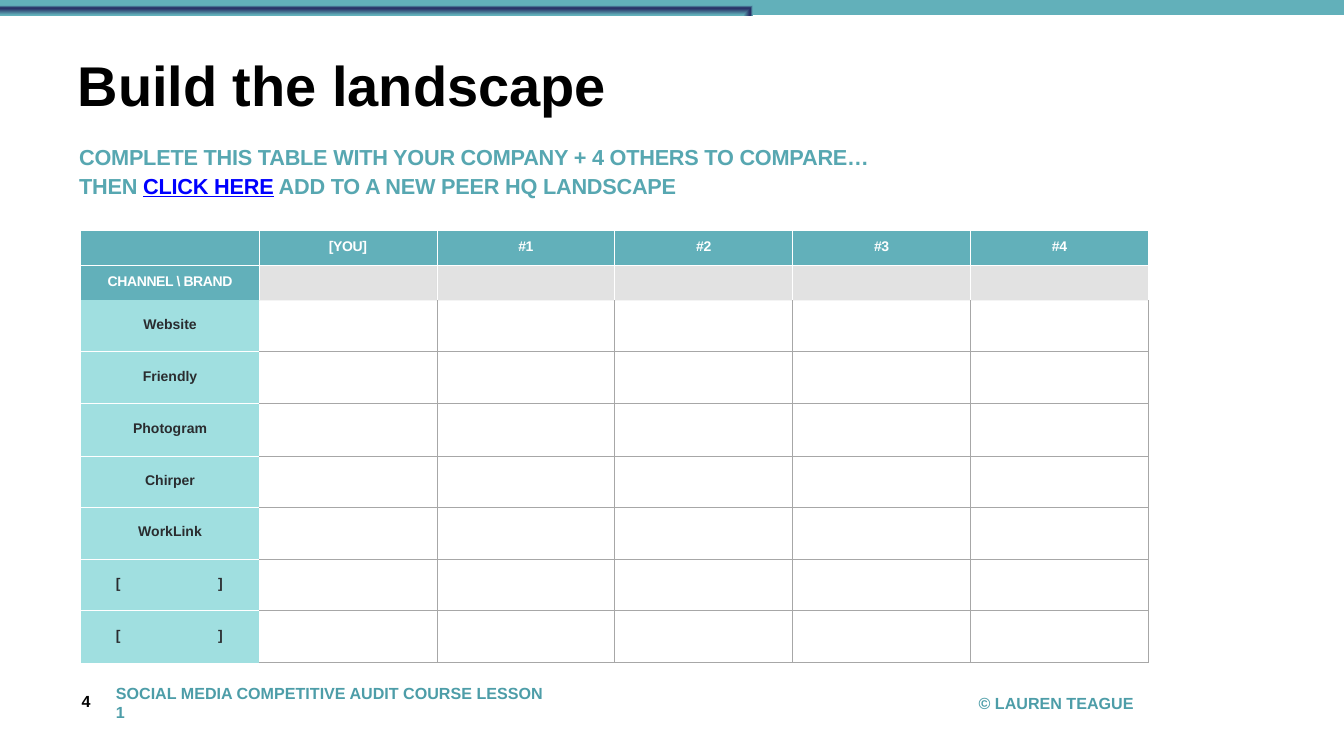
import pptx
import pptx.util
import pptx.dml.color
import pptx.enum.shapes
import pptx.enum.text
import pptx.oxml
import pptx.oxml.ns
from pptx.util import Inches

RGBColor = pptx.dml.color.RGBColor
PP_ALIGN = pptx.enum.text.PP_ALIGN
MSO_ANCHOR = pptx.enum.text.MSO_ANCHOR

BLACK = RGBColor(0x00, 0x00, 0x00)
WHITE = RGBColor(0xFF, 0xFF, 0xFF)
TEAL = RGBColor(0x62, 0xB0, 0xBA)
SUBTITLE = RGBColor(0x57, 0xA7, 0xB1)
FOOTER = RGBColor(0x4D, 0x9D, 0xA8)
AQUA = RGBColor(0xA0, 0xDF, 0xE0)
GRAY = RGBColor(0xA7, 0xA7, 0xA7)
INK = RGBColor(0x2A, 0x2C, 0x2F)
LINK = RGBColor(0x00, 0x00, 0xFF)
NAVY = RGBColor(0x25, 0x2A, 0x62)
SLATE = RGBColor(0x2B, 0x38, 0x6B)

BRANDS = ["[YOU]", "#1", "#2", "#3", "#4"]
CHANNELS = ["Website", "Friendly", "Photogram", "Chirper", "WorkLink", "[\t]", "[\t]"]
ROW_HEIGHTS = [0.69, 0.69, 1.01, 1.04, 1.04, 1.01, 1.04, 1.01, 1.04]
COLUMN_WIDTH = 3.53


def xml(body):
    return pptx.oxml.parse_xml(body.replace(">", f" {pptx.oxml.ns.nsdecls('a')}>", 1))


def add_run(p, text, size=23, color=BLACK, underline=None, spacing=0):
    r = p.add_run()
    r.text = text
    r.font.name = "Arial"
    r.font.size = pptx.util.Pt(size)
    r.font.bold = True
    r.font.color.rgb = color
    r.font.underline = underline
    if spacing:
        r._r.get_or_add_rPr().set("spc", str(round(spacing * 100)))


def set_borders(cell, colors):
    """Draw 1 pt edges for the sides in colors and clear the others."""
    tcPr = cell._tc.get_or_add_tcPr()
    for i, side in enumerate("LRTB"):
        if side in colors:
            line = f'<a:solidFill><a:srgbClr val="{colors[side]}"/></a:solidFill>'
        else:
            line = "<a:noFill/>"
        tcPr.insert(i, xml(f'<a:ln{side} w="12700">{line}</a:ln{side}>'))


def cell_borders(row, col):
    if row == 0:
        sides, color = "LRB", WHITE
    elif row == 1:
        sides, color = "LRT", WHITE
    elif col == 0:
        sides, color = "TB", WHITE
    else:
        sides, color = "LRTB", GRAY
    if row == 2:
        sides = sides.replace("T", "")
    if col == 0 or (col == 1 and row > 1):
        sides = sides.replace("L", "")
    if row == len(ROW_HEIGHTS) - 1 and col == 0:
        sides = "T"
    return {side: color for side in sides}


class Deck:
    def __init__(self, width, height):
        self.prs = pptx.Presentation()
        self.prs.slide_width = Inches(width)
        self.prs.slide_height = Inches(height)
        self.s = self.prs.slides.add_slide(self.prs.slide_layouts[6])

    def gradient_bar(self, left, top, width, height, stops, focus):
        sp = self.s.shapes.add_shape(pptx.enum.shapes.MSO_SHAPE.RECTANGLE, Inches(left),
                                     Inches(top), Inches(width), Inches(height))
        sp.shadow.inherit = False
        sp.line.fill.background()
        gs = "".join(f'<a:gs pos="{pos * 1000}"><a:srgbClr val="{color}"/></a:gs>'
                     for pos, color in stops)
        rect = " ".join(f'{side}="{value * 1000}"' for side, value in zip("ltrb", focus))
        geometry = sp._element.spPr.find(pptx.oxml.ns.qn("a:prstGeom"))
        geometry.addnext(xml(
            f'<a:gradFill rotWithShape="1"><a:gsLst>{gs}</a:gsLst>'
            f'<a:path path="rect"><a:fillToRect {rect}/></a:path></a:gradFill>'))

    def text(self, left, top, width, height, paragraphs, inset=0.08,
             anchor=MSO_ANCHOR.TOP, line_spacing=None):
        """Each paragraph is a list of (text, format) runs."""
        sp = self.s.shapes.add_textbox(Inches(left), Inches(top), Inches(width), Inches(height))
        tf = sp.text_frame
        tf.word_wrap = True
        tf.vertical_anchor = anchor
        tf.margin_left = tf.margin_right = Inches(inset)
        tf.margin_top = tf.margin_bottom = Inches(inset)
        for i, runs in enumerate(paragraphs):
            p = tf.add_paragraph() if i else tf.paragraphs[0]
            p.line_spacing = line_spacing
            for text, style in runs:
                add_run(p, text, **style)

    def cell_text(self, cell, text, **style):
        cell.vertical_anchor = MSO_ANCHOR.MIDDLE
        cell.margin_left = cell.margin_right = Inches(0.06)
        cell.margin_top = cell.margin_bottom = Inches(0.06)
        p = cell.text_frame.paragraphs[0]
        p.alignment = PP_ALIGN.CENTER
        p.line_spacing = 0.8
        if "\t" in text:  # bracketed blank to fill in
            p.alignment = PP_ALIGN.LEFT
            cell.margin_left = Inches(0.69)
            p._p.get_or_add_pPr().append(xml(
                f'<a:tabLst><a:tab pos="{Inches(2.03)}" algn="l"/></a:tabLst>'))
        add_run(p, text, size=20, **style)

    def table(self, left, top):
        columns = len(BRANDS) + 1
        frame = self.s.shapes.add_table(
            len(ROW_HEIGHTS), columns, Inches(left), Inches(top),
            Inches(COLUMN_WIDTH * columns), Inches(sum(ROW_HEIGHTS)))
        table = frame.table
        table.first_row = table.horz_banding = False
        for column in table.columns:
            column.width = Inches(COLUMN_WIDTH)
        for row, height in enumerate(ROW_HEIGHTS):
            table.rows[row].height = Inches(height)
            for col in range(columns):
                cell = table.cell(row, col)
                if row > 1 and col:
                    cell.fill.background()
                else:
                    cell.fill.solid()
                    cell.fill.fore_color.rgb = (
                        AQUA if row > 1 else GRAY if row and col else TEAL)
                if row == 1 and col:
                    color = cell._tc.tcPr.find(".//" + pptx.oxml.ns.qn("a:srgbClr"))
                    color.append(xml('<a:alpha val="32000"></a:alpha>'))
                set_borders(cell, cell_borders(row, col))
        for col, brand in enumerate(BRANDS, 1):
            self.cell_text(table.cell(0, col), brand, color=WHITE, spacing=-0.6)
        self.cell_text(table.cell(1, 0), "CHANNEL \\ BRAND", color=WHITE, spacing=-0.6)
        for row, channel in enumerate(CHANNELS, 2):
            self.cell_text(table.cell(row, 0), channel, color=INK)


def main():
    deck = Deck(26.67, 15)
    deck.gradient_bar(-0.09, -0.08, 26.84, 0.38,
                      [(0, TEAL), (62, SLATE), (74, NAVY), (100, TEAL)], (6, 99, 94, 1))

    footer = dict(color=FOOTER)
    deck.text(2.22, 13.68, 8.91, 0.52,
              [[("SOCIAL MEDIA COMPETITIVE AUDIT COURSE LESSON 1", footer)]],
              anchor=MSO_ANCHOR.MIDDLE)
    deck.text(19.34, 13.68, 3.33, 0.52, [[("© LAUREN TEAGUE", footer)]],
              anchor=MSO_ANCHOR.MIDDLE)
    deck.text(1.54, 13.64, 0.57, 0.52, [[("4", {})]])

    deck.text(1.49, 1.22, 24.24, 1.66, [[("Build the landscape", dict(size=80))]],
              inset=0.05, line_spacing=0.8)
    body = dict(size=31, color=SUBTITLE, spacing=-0.3)
    link = dict(body, color=LINK, underline=True)
    deck.text(1.49, 2.72, 24.24, 1.89, [
        [("COMPLETE THIS TABLE WITH YOUR COMPANY + 4 OTHERS TO COMPARE…", body)],
        [("THEN ", body), ("CLICK HERE", link), (" ADD TO A NEW PEER HQ LANDSCAPE", body)],
    ], line_spacing=1.1)

    deck.table(1.61, 4.58)
    deck.prs.save("out.pptx")


if __name__ == "__main__":
    main()
